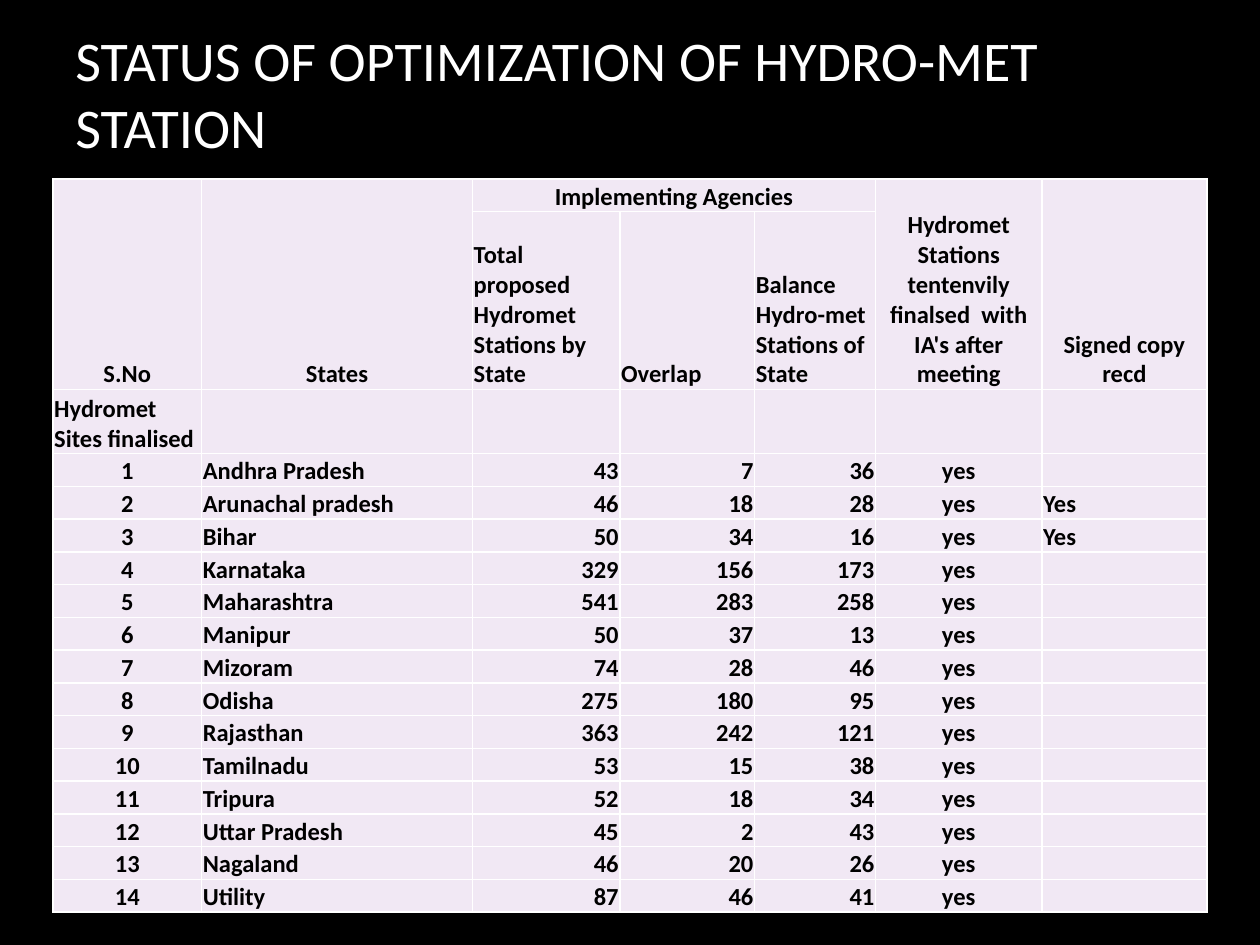
from lxml.etree import SubElement
from pptx import Presentation
from pptx.dml.color import RGBColor
from pptx.enum.text import MSO_ANCHOR as Anchor, PP_ALIGN as Align
from pptx.oxml import parse_xml
from pptx.oxml.ns import nsdecls, qn
from pptx.util import Inches, Pt

BLACK = RGBColor(0x00, 0x00, 0x00)
WHITE = RGBColor(0xFF, 0xFF, 0xFF)
LILAC = RGBColor(0xF1, 0xE8, 0xF4)

COLUMN_SPANS = [11.8, 21.5, 11.7, 10.7, 9.6, 13.2, 13.1]
COLUMN_ALIGNS = [Align.CENTER, Align.LEFT, Align.RIGHT, Align.RIGHT, Align.RIGHT,
                 Align.CENTER, Align.LEFT]
HEADINGS = [
    ["S.No", "States", "Implementing Agencies", "", "",
     "Hydromet Stations tentenvily finalsed  with IA's after meeting", "Signed copy recd"],
    ["", "", "Total proposed Hydromet Stations by State", "Overlap",
     "Balance Hydro-met Stations of State", "", ""],
    ["Hydromet Sites finalised", "", "", "", "", "", ""],
]
HEADING_SPANS = [2.6, 12.6, 5.1]
HEADING_ALIGNS = [Align.CENTER, Align.LEFT, Align.LEFT]
MERGES = [((0, column), (1, column)) for column in (0, 1, 5, 6)] + [((0, 2), (0, 4))]
STATE_SPAN = 2.6
STATES = [
    ("Andhra Pradesh", 43, 7, 36, ""),
    ("Arunachal pradesh", 46, 18, 28, "Yes"),
    ("Bihar", 50, 34, 16, "Yes"),
    ("Karnataka", 329, 156, 173, ""),
    ("Maharashtra", 541, 283, 258, ""),
    ("Manipur", 50, 37, 13, ""),
    ("Mizoram", 74, 28, 46, ""),
    ("Odisha", 275, 180, 95, ""),
    ("Rajasthan", 363, 242, 121, ""),
    ("Tamilnadu", 53, 15, 38, ""),
    ("Tripura", 52, 18, 34, ""),
    ("Uttar Pradesh", 45, 2, 43, ""),
    ("Nagaland", 46, 20, 26, ""),
    ("Utility", 87, 46, 41, ""),
]


class StatusSlide:
    """Hold the style and the current slide, measured on a grid of 100 columns by 75 rows."""

    font_name = "Calibri"
    title_size = 32
    table_size = 14

    def __init__(self, presentation):
        self.column = presentation.slide_width / 100
        self.row = presentation.slide_height / 75
        self.slide = presentation.slides.add_slide(presentation.slide_layouts[6])
        self.slide.background.fill.solid()
        self.slide.background.fill.fore_color.rgb = BLACK

    def place(self, left, top, width, height):
        return (int(left * self.column), int(top * self.row),
                int(width * self.column), int(height * self.row))

    def style(self, paragraph, size, color, bold=False):
        for run in paragraph.runs:
            run.font.name = self.font_name
            run.font.size = Pt(size)
            run.font.bold = bold
            run.font.color.rgb = color

    def title(self, text, *box):
        shape = self.slide.shapes.add_textbox(*self.place(*box))
        text_frame = shape.text_frame
        text_frame.word_wrap = True
        text_frame.vertical_anchor = Anchor.MIDDLE
        text_frame.text = text
        self.style(text_frame.paragraphs[0], self.title_size, WHITE)

    def table(self, left, top, column_spans, row_spans, texts, aligns, merges):
        box = self.place(left, top, sum(column_spans), sum(row_spans))
        table = self.slide.shapes.add_table(len(row_spans), len(column_spans), *box).table
        table.first_row = table.horz_banding = False
        for column, span in zip(table.columns, column_spans):
            column.width = int(span * self.column)
        for row, span, row_texts, row_aligns in zip(table.rows, row_spans, texts, aligns):
            row.height = int(span * self.row)
            for cell, text, align in zip(row.cells, row_texts, row_aligns):
                self.cell(cell, text, align)
        for first, last in merges:
            table.cell(*first).merge(table.cell(*last))

    def cell(self, cell, text, align):
        cell.margin_left = cell.margin_right = cell.margin_top = Inches(0.01)
        cell.margin_bottom = 0
        cell.vertical_anchor = Anchor.BOTTOM
        for side in ("lnL", "lnR", "lnT", "lnB"):
            cell._tc.get_or_add_tcPr().append(parse_xml(
                f'<a:{side} {nsdecls("a")} w="{Pt(1)}"><a:solidFill>'
                f'<a:srgbClr val="{WHITE}"/></a:solidFill></a:{side}>'))
        cell.fill.solid()
        cell.fill.fore_color.rgb = LILAC
        paragraph = cell.text_frame.paragraphs[0]
        paragraph.alignment = align
        if text:
            paragraph.text = text
            self.style(paragraph, self.table_size, BLACK, bold=True)
        else:
            SubElement(paragraph._p, qn("a:endParaRPr"), sz=str(self.table_size * 100))


def main():
    presentation = Presentation()
    presentation.slide_width = Inches(10)
    presentation.slide_height = Inches(7.5)
    status = StatusSlide(presentation)
    status.title("STATUS OF OPTIMIZATION OF HYDRO-MET STATION", 5, 3, 90, 8.7)
    state_rows = [
        [str(number), state, str(total), str(overlap), str(balance), "yes", signed]
        for number, (state, total, overlap, balance, signed) in enumerate(STATES, 1)
    ]
    status.table(
        4.2, 14.2, COLUMN_SPANS,
        HEADING_SPANS + [STATE_SPAN] * len(STATES),
        HEADINGS + state_rows,
        [[align] * len(COLUMN_SPANS) for align in HEADING_ALIGNS] + [COLUMN_ALIGNS] * len(STATES),
        MERGES,
    )
    presentation.save("out.pptx")


if __name__ == "__main__":
    main()
